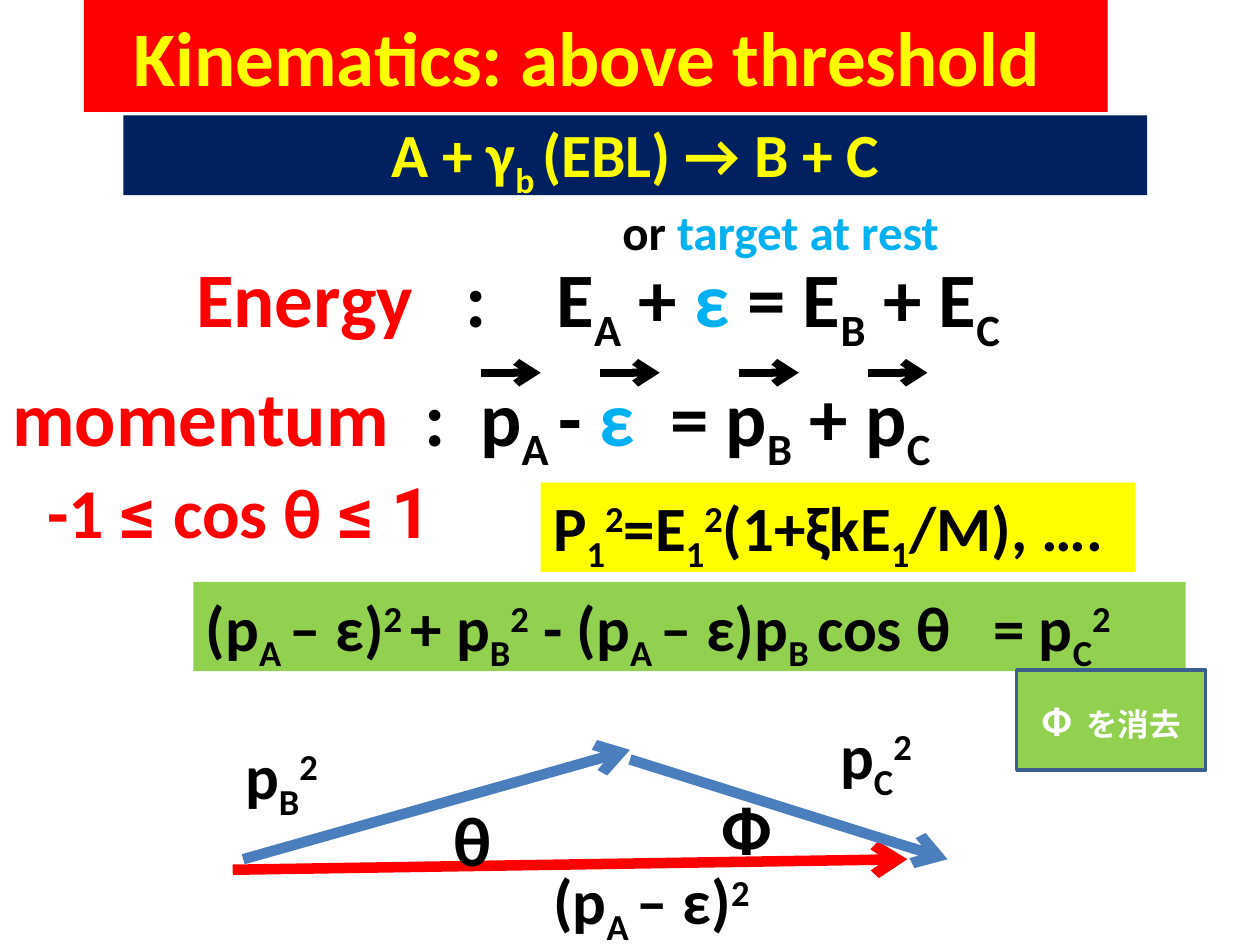
import pptx
import pptx.util
import pptx.dml.color
import pptx.enum.shapes
import pptx.enum.text
import pptx.oxml.ns
import lxml.etree

Pt = pptx.util.Pt
ANCHOR = pptx.enum.text.MSO_ANCHOR
ALIGN = pptx.enum.text.PP_ALIGN

COLOURS = {
    "red": "FF0000", "yellow": "FFFF00", "navy": "002060", "green": "92D050",
    "black": "000000", "sky": "00B0F0", "white": "FFFFFF",
    "arrow": "4B7EBC", "edge": "3A5F8C",
}
BASELINES = {"sub": "-25000", "sup": "30000"}

# A span is plain text, or text followed by sub, sup, a colour, a font or a size
P_A_LESS_EPS = ["(p", ("A ", "sub"), "– ε)"]
P_B2 = ["p", ("B", "sub"), ("2", "sup")]
P_C2 = ["p", ("C", "sub"), ("2", "sup")]

# Filled boxes: left, top, width, height, fill, edge, text size, text colour,
# centred, line spacing, spans
PANELS = [
    (48, 0, 585, 64, "red", None, 44, "yellow", True, None,
     ["Kinematics: above threshold "]),
    (70.5, 66, 585, 45.5, "navy", None, 35.1, "yellow", True, 0.9,
     ["A + γ", ("b ", "sub"), "(EBL) → B + C"]),
    (110.5, 332.5, 567, 51, "green", None, 36, "black", False, None,
     P_A_LESS_EPS + [("2 ", "sup"), "+ "] + P_B2 + [" - "] + P_A_LESS_EPS
     + ["p", ("B ", "sub"), "cos θ   = "] + P_C2),
    (309, 275.75, 340, 51, "yellow", None, 36, "black", False, None,
     ["P", ("1", "sub"), ("2", "sup"), "=E", ("1", "sub"), ("2", "sup"),
      "(1+ξkE", ("1", "sub"), "/M), …."]),
    (581, 383, 108, 57, "green", "edge", 24, "white", True, None,
     ["Ф", ("  を消去", 18)]),
]

# Text: left, top, width, height, wrap, size, colour, spans
LABELS = [
    (105, 139.5, 484, 60.5, False, 44, "black",
     [("Energy   ", "red"), ":    E", ("A", "sub"), " + ", ("ε", "sky"),
      " = E", ("B", "sub"), " + E", ("C", "sub")]),
    (0, 207.5, 720, 60.5, True, 44, "black",
     [("momentum  ", "red"), ":  p", ("A ", "sub"), "- ", ("ε", "sky"),
      "  = p", ("B", "sub"), " + p", ("C", "sub")]),
    (348.5, 111.5, 209.5, 41, True, 28, "black",
     ["or ", ("target at rest", "sky")]),
    (20, 264, 234, 55.5, True, 40, "red",
     ["-1 ", ("≤ ", "Roboto"), "cos θ", (" ≤ 1", "Roboto")]),
    (309, 489, 132, 51, False, 36, "black", P_A_LESS_EPS + [("2", "sup")]),
    (133, 417.5, 60, 51, False, 36, "black", P_B2),
    (473, 406, 59, 51, False, 36, "black", P_C2),
    (252, 451.5, 36.5, 55.5, False, 40, "black", ["θ"]),
    (405.5, 445.5, 44, 55.5, False, 40, "black", ["Ф"]),
]

# Momentum triangle: start x, start y, end x, end y, colour
TRIANGLE = [
    (133, 497, 518.5, 491, "red"),
    (139, 491, 360, 428.5, "arrow"),
    (360, 434, 541.5, 491, "arrow"),
]
VECTOR_STARTS = [275, 343, 422.5, 496]
VECTOR_Y, VECTOR_LENGTH = 213, 34


def colour(name):
    return pptx.dml.color.RGBColor.from_string(COLOURS[name])


def write(frame, spans, size, ink, centred=False, spacing=None):
    para = frame.paragraphs[0]
    para.alignment = ALIGN.CENTER if centred else ALIGN.LEFT
    if spacing:
        para.line_spacing = spacing
    for span in spans:
        text, style = (span, None) if isinstance(span, str) else span
        run = para.add_run()
        run.text = text
        font = run.font
        font.name, font.size, font.bold = "Calibri", Pt(size), True
        font.color.rgb = colour(style if style in COLOURS else ink)
        if style in BASELINES:
            run._r.get_or_add_rPr().set("baseline", BASELINES[style])
        elif style == "Roboto":
            font.name = style
        elif isinstance(style, int):
            font.size = Pt(style)


def add_panel(page, left, top, width, height, fill, edge, size, ink,
              centred, spacing, spans):
    box = page.shapes.add_shape(pptx.enum.shapes.MSO_SHAPE.RECTANGLE,
                                Pt(left), Pt(top), Pt(width), Pt(height))
    box.shadow.inherit = False
    box.fill.solid()
    box.fill.fore_color.rgb = colour(fill)
    if edge:
        box.line.color.rgb = colour(edge)
        box.line.width = Pt(2)
    else:
        box.line.fill.background()
    box.text_frame.word_wrap = True
    box.text_frame.vertical_anchor = ANCHOR.MIDDLE if centred else ANCHOR.TOP
    write(box.text_frame, spans, size, ink, centred, spacing)


def add_label(page, left, top, width, height, wrap, size, ink, spans):
    box = page.shapes.add_textbox(Pt(left), Pt(top), Pt(width), Pt(height))
    box.text_frame.word_wrap = wrap
    write(box.text_frame, spans, size, ink)


def add_arrow(page, x1, y1, x2, y2, ink, weight):
    arrow = page.shapes.add_connector(
        pptx.enum.shapes.MSO_CONNECTOR.STRAIGHT, Pt(x1), Pt(y1), Pt(x2), Pt(y2))
    arrow.line.color.rgb = colour(ink)
    arrow.line.width = Pt(weight)
    qn = pptx.oxml.ns.qn
    head = lxml.etree.SubElement(arrow.line._get_or_add_ln(), qn("a:tailEnd"))
    head.set("type", "arrow")
    lxml.etree.SubElement(arrow._element.spPr, qn("a:effectLst"))


def main():
    deck = pptx.Presentation()
    deck.slide_width, deck.slide_height = Pt(720), Pt(540)
    page = deck.slides.add_slide(deck.slide_layouts[6])

    # Triangle first, so its labels lie on top
    for x1, y1, x2, y2, ink in TRIANGLE:
        add_arrow(page, x1, y1, x2, y2, ink, 6)
    # Equations and captions
    for panel in PANELS:
        add_panel(page, *panel)
    for label in LABELS:
        add_label(page, *label)
    # Vector marks over the momentum terms
    for x in VECTOR_STARTS:
        add_arrow(page, x, VECTOR_Y, x + VECTOR_LENGTH, VECTOR_Y, "black", 4.5)

    deck.save("out.pptx")


if __name__ == "__main__":
    main()
